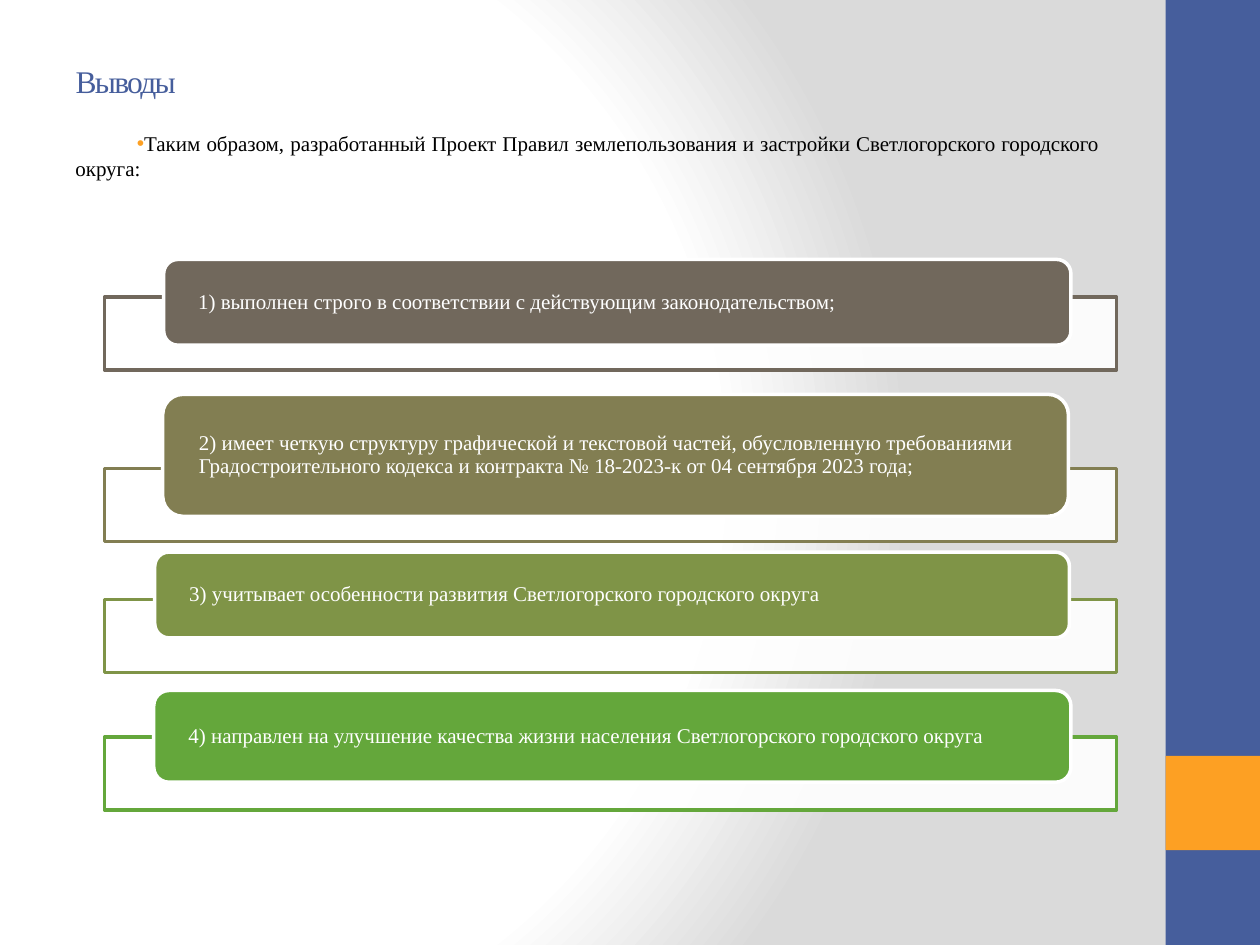
from dataclasses import dataclass
from typing import NamedTuple

from lxml.etree import SubElement
from pptx import Presentation
from pptx.dml.color import RGBColor
from pptx.enum.shapes import MSO_SHAPE
from pptx.enum.text import MSO_ANCHOR, PP_ALIGN
from pptx.oxml import parse_xml
from pptx.oxml.ns import nsdecls, qn
from pptx.util import Cm, Pt


class Box(NamedTuple):
    left: float
    top: float
    width: float
    height: float

    def lengths(self):
        return [Cm(v) for v in self]


class Conclusion(NamedTuple):
    text: str
    color: str
    frame_top: float
    card: Box


@dataclass(frozen=True)
class Theme:
    font: str = "Times New Roman"
    blue: str = "465E9C"
    orange: str = "FDA023"
    white: str = "FFFFFF"
    gray: str = "DADADA"
    black: str = "000000"
    title_size: int = 18
    text_size: int = 12
    line_width: int = 2


THEME = Theme()
FRAME_LEFT, FRAME_WIDTH, FRAME_HEIGHT = 2.11, 20.4, 1.47
CARD_INSET = 0.61
TITLE = "Выводы"
INTRO = ("Таким образом, разработанный Проект Правил землепользования и застройки "
         "Светлогорского городского округа:")
CONCLUSIONS = [
    Conclusion("1) выполнен строго в соответствии с действующим законодательством;",
               "71685C", 5.99, Box(3.3, 5.23, 18.29, 1.73)),
    Conclusion("2) имеет четкую структуру графической и текстовой частей, обусловленную "
               "требованиями Градостроительного кодекса и контракта № 18-2023-к "
               "от 04 сентября 2023 года;",
               "827E52", 9.45, Box(3.28, 7.95, 18.26, 2.46)),
    Conclusion("3) учитывает особенности развития Светлогорского городского округа",
               "7F9447", 12.09, Box(3.12, 11.13, 18.44, 1.73)),
    Conclusion("4) направлен на улучшение качества жизни населения Светлогорского "
               "городского округа",
               "64A73B", 14.86, Box(3.1, 13.92, 18.49, 1.85)),
]


def rgb(color: str) -> RGBColor:
    return RGBColor.from_string(color)


def add_run(p, text: str, size: int, color: str):
    r = p.add_run()
    r.text = text
    r.font.name = THEME.font
    r.font.size = Pt(size)
    r.font.color.rgb = rgb(color)
    return r


def add_block(s, kind, box: Box, fill: str, line: str | None = None):
    sp = s.shapes.add_shape(kind, *box.lengths())
    sp.shadow.inherit = False
    sp.fill.solid()
    sp.fill.fore_color.rgb = rgb(fill)
    if line:
        sp.line.color.rgb = rgb(line)
        sp.line.width = Pt(THEME.line_width)
    else:
        sp.line.fill.background()
    return sp


def set_background(s) -> None:
    s.background.fill.gradient()
    old = s.element.find(".//" + qn("p:bgPr")).find(qn("a:gradFill"))
    stops = ((0, THEME.white), (75, THEME.white), (100, THEME.gray))
    gs = "".join(f'<a:gs pos="{pos * 1000}"><a:srgbClr val="{color}"/></a:gs>'
                 for pos, color in stops)
    new = parse_xml(
        f'<a:gradFill {nsdecls("a")} rotWithShape="1"><a:gsLst>{gs}</a:gsLst>'
        '<a:path path="circle"><a:fillToRect l="20000" t="50000" r="100000" b="50000"/>'
        '</a:path></a:gradFill>')
    old.getparent().replace(old, new)


def add_title(s) -> None:
    sp = s.shapes.title
    sp.left, sp.top, sp.width, sp.height = Box(1.27, 0.76, 21.16, 1.75).lengths()
    tf = sp.text_frame
    tf.vertical_anchor = MSO_ANCHOR.MIDDLE
    p = tf.paragraphs[0]
    p.alignment = PP_ALIGN.LEFT
    r = add_run(p, TITLE, THEME.title_size, THEME.blue)
    r.font._element.set("spc", "-100")


def add_intro(s) -> None:
    tf = s.shapes.add_textbox(*Box(1.27, 2.51, 21.16, 2.5).lengths()).text_frame
    tf.word_wrap = True
    p = tf.paragraphs[0]
    p.alignment = PP_ALIGN.JUSTIFY
    pPr = p._p.get_or_add_pPr()
    pPr.set("marL", "0")
    pPr.set("indent", str(Cm(1.24)))
    SubElement(SubElement(pPr, qn("a:buClr")), qn("a:srgbClr"), val=THEME.orange)
    SubElement(pPr, qn("a:buFont"), typeface="Arial")
    SubElement(pPr, qn("a:buChar"), char="•")
    add_run(p, INTRO, THEME.text_size, THEME.black)


def add_conclusion(s, item: Conclusion) -> None:
    frame = add_block(s, MSO_SHAPE.RECTANGLE,
                      Box(FRAME_LEFT, item.frame_top, FRAME_WIDTH, FRAME_HEIGHT),
                      THEME.white, item.color)
    fill = frame._element.spPr.find(qn("a:solidFill"))
    SubElement(fill.find(qn("a:srgbClr")), qn("a:alpha"), val="90000")

    card = add_block(s, MSO_SHAPE.ROUNDED_RECTANGLE, item.card, item.color, THEME.white)
    tf = card.text_frame
    tf.word_wrap = True
    tf.vertical_anchor = MSO_ANCHOR.MIDDLE
    tf.margin_left = tf.margin_right = Cm(CARD_INSET)
    tf.margin_top = tf.margin_bottom = Cm(0)
    p = tf.paragraphs[0]
    p.alignment = PP_ALIGN.LEFT
    p.line_spacing = 0.9
    add_run(p, item.text, THEME.text_size, THEME.white)


def main() -> None:
    """Build the conclusions slide and save it."""
    prs = Presentation()
    prs.slide_width, prs.slide_height = Cm(25.4), Cm(19.05)
    s = prs.slides.add_slide(prs.slide_layouts[5])
    set_background(s)
    add_block(s, MSO_SHAPE.RECTANGLE, Box(23.5, 0, 1.9, 19.05), THEME.blue)
    add_block(s, MSO_SHAPE.RECTANGLE, Box(23.5, 15.24, 1.9, 1.9), THEME.orange)
    add_title(s)
    add_intro(s)
    for item in CONCLUSIONS:
        add_conclusion(s, item)
    prs.save("out.pptx")


if __name__ == "__main__":
    main()
